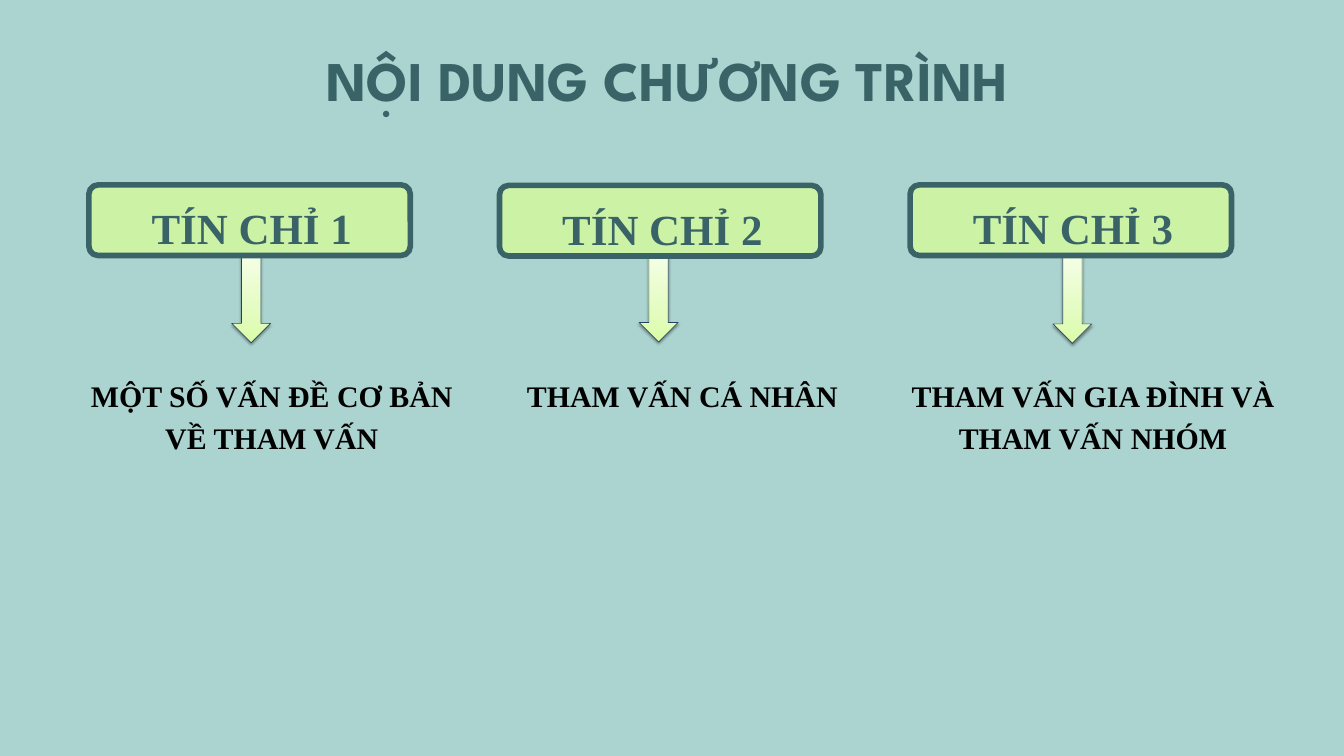
from lxml.etree import SubElement
from pptx import Presentation
from pptx.dml.color import RGBColor
from pptx.enum.shapes import MSO_SHAPE
from pptx.enum.text import MSO_ANCHOR, MSO_AUTO_SIZE, PP_ALIGN
from pptx.oxml.ns import qn
from pptx.util import Cm, Pt

COLORS = {
    "background": "ABD3D0",
    "teal": "3A6367",
    "badge": "CCF2A6",
    "topic": "000000",
    "arrow_line": "254061",
    "shadow": "000000",
}
ARROW_STOPS = [(0, "DAFDA7"), (35, "E4FCC2"), (100, "F5FFE7")]
SERIF = "Times New Roman"
COLUMN_PITCH = 15.52

# Credit, topic, arrow left, arrow top, badge top
CREDITS = [
    ("TÍN CHỈ 1", "MỘT SỐ VẤN ĐỀ CƠ BẢN VỀ THAM VẤN", 8.76, 9.53, 6.99),
    ("TÍN CHỈ 2", "THAM VẤN CÁ NHÂN", 24.16, 9.5, 7.01),
    ("TÍN CHỈ 3", "THAM VẤN GIA ĐÌNH VÀ THAM VẤN NHÓM", 39.8, 9.55, 6.99),
]


def rgb(name):
    return RGBColor.from_string(COLORS[name])


def write_text(holder, text, size, font_name, color, spacing):
    frame = holder.text_frame
    frame.word_wrap = True
    frame.auto_size = MSO_AUTO_SIZE.SHAPE_TO_FIT_TEXT
    frame.vertical_anchor = MSO_ANCHOR.TOP
    frame.margin_left = frame.margin_right = 0
    frame.margin_top = frame.margin_bottom = 0
    paragraph = frame.paragraphs[0]
    paragraph.alignment = PP_ALIGN.CENTER
    paragraph.line_spacing = Pt(spacing)
    paragraph.space_before = Pt(0)
    run = paragraph.add_run()
    run.text = text
    run.font.size = Pt(size)
    run.font.name = font_name
    run.font.bold = True
    run.font.color.rgb = rgb(color)


def add_title(slide, text):
    title = slide.shapes.title
    title.left, title.top = Cm(2.69), Cm(1.3)
    title.width, title.height = Cm(45.09), Cm(2.74)
    write_text(title, text, 60, "League Spartan", "teal", 84)


def add_arrow(slide, left, top):
    arrow = slide.shapes.add_shape(
        MSO_SHAPE.DOWN_ARROW, Cm(left), Cm(top), Cm(1.47), Cm(3.43))
    arrow.line.color.rgb = rgb("arrow_line")
    arrow.line.width = Pt(0.75)

    # Three-stop gradient, running from the tip upwards
    arrow.fill.gradient()
    arrow.fill.gradient_angle = 90
    properties = arrow.element.spPr
    stop_list = properties.find(".//" + qn("a:gsLst"))
    stop_list.clear()
    for position, color in ARROW_STOPS:
        stop = SubElement(stop_list, qn("a:gs"), pos=str(position * 1000))
        SubElement(stop, qn("a:srgbClr"), val=color)

    # Soft shadow below
    arrow.shadow.inherit = False
    shadow = SubElement(
        properties.find(qn("a:effectLst")), qn("a:outerShdw"),
        blurRad=str(Pt(3.1)), dist=str(Pt(1.6)), dir="5400000",
        rotWithShape="0")
    shadow_color = SubElement(shadow, qn("a:srgbClr"), val=COLORS["shadow"])
    SubElement(shadow_color, qn("a:alpha"), val="38000")


def add_badge(slide, left, top, label):
    badge = slide.shapes.add_shape(
        MSO_SHAPE.ROUNDED_RECTANGLE, Cm(left), Cm(top), Cm(12.15), Cm(2.67))
    badge.adjustments[0] = 0.13
    badge.shadow.inherit = False
    badge.fill.solid()
    badge.fill.fore_color.rgb = rgb("badge")
    badge.line.color.rgb = rgb("teal")
    badge.line.width = Pt(6)
    caption = slide.shapes.add_textbox(
        Cm(left + 0.48), Cm(top + 0.48), Cm(11.35), Cm(2.06))
    write_text(caption, label, 46, SERIF, "teal", 59.8)


def add_topic(slide, left, text):
    topic = slide.shapes.add_textbox(
        Cm(left), Cm(14.07), Cm(14.05), Cm(3.2))
    write_text(topic, text, 32, SERIF, "topic", 44.8)


def main():
    presentation = Presentation()
    presentation.slide_width = Cm(50.8)
    presentation.slide_height = Cm(28.58)
    slide = presentation.slides.add_slide(presentation.slide_layouts[5])
    slide.background.fill.solid()
    slide.background.fill.fore_color.rgb = rgb("background")

    add_title(slide, "NỘI DUNG CHƯƠNG TRÌNH")

    # One column per credit, the arrow tucked behind its badge
    for column, (label, topic, arrow_left, arrow_top, badge_top) in enumerate(CREDITS):
        offset = column * COLUMN_PITCH
        add_arrow(slide, arrow_left, arrow_top)
        add_badge(slide, 3.36 + offset, badge_top, label)
        add_topic(slide, 3.25 + offset, topic)

    presentation.save("out.pptx")


if __name__ == "__main__":
    main()
